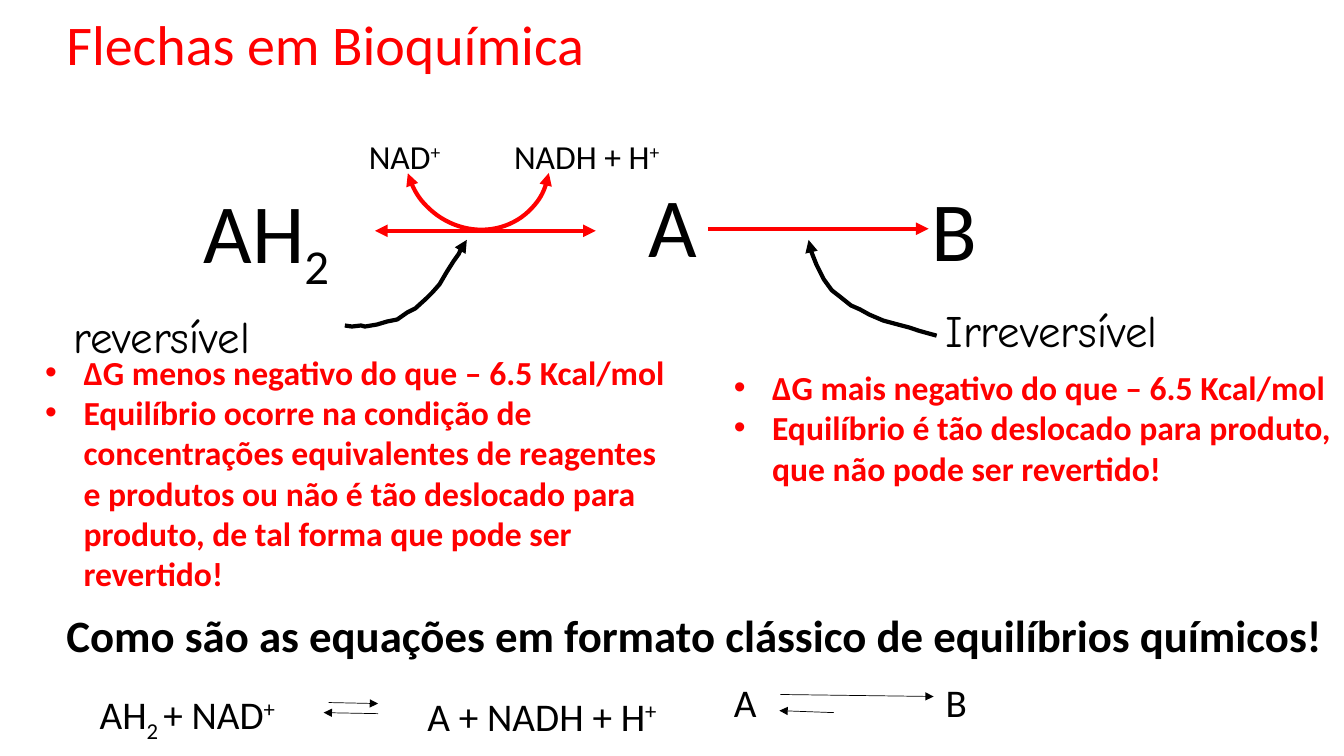
from lxml import etree
from pptx import Presentation
from pptx.dml.color import RGBColor
from pptx.enum.shapes import MSO_CONNECTOR as Connector, MSO_SHAPE as Shape
from pptx.enum.text import MSO_AUTO_SIZE as AutoSize
from pptx.oxml.ns import qn
from pptx.util import Inches, Pt

COLORS = {"red": "FF0000", "black": "000000"}
BODY, HAND = "Calibri", "Comic Neue"
SUB, SUP = -25, 30

# (left, top, width, height), runs as (text, baseline), size, color, font, bold
LABELS = [
    ((6.33, 1.67, 0.69, 1.11), [("A", 0)], 60, "black", BODY, False),
    ((1.92, 1.73, 1.5, 1.11), [("AH", 0), ("2", SUB)], 60, "black", BODY, False),
    ((9.14, 1.71, 0.66, 1.11), [("B", 0)], 60, "black", BODY, False),
    ((3.56, 1.3, 0.93, 0.5), [("NAD", 0), ("+", SUP)], 24, "black", BODY, False),
    ((5, 1.3, 1.67, 0.5), [("NADH + H", 0), ("+", SUP)], 24, "black", BODY, False),
    ((9.28, 2.95, 3.05, 0.64), [("Irreversível", 0)], 32, "black", HAND, False),
    ((0.63, 3.01, 2.56, 0.64), [("reversível", 0)], 32, "black", HAND, False),
    ((0.56, 0.05, 5.39, 0.77), [("Flechas em Bioquímica", 0)], 40, "red", BODY, False),
    ((0.56, 5.98, 12.77, 0.64),
     [("Como são as equações em formato clássico de equilíbrios químicos!", 0)],
     32, "black", BODY, True),
    ((0.89, 6.8, 1.98, 0.57), [("AH", 0), ("2 ", SUB), ("+ NAD", 0), ("+", SUP)],
     28, "black", BODY, False),
    ((4.14, 6.82, 2.47, 0.57), [("A + NADH + H", 0), ("+", SUP)], 28, "black", BODY, False),
    ((7.18, 6.68, 0.43, 0.57), [("A", 0)], 28, "black", BODY, False),
    ((9.28, 6.68, 0.43, 0.57), [("B", 0)], 28, "black", BODY, False),
]

BULLETS = [
    ((7.18, 3.59, 6.23, 1.31), [
        "ΔG mais negativo do que – 6.5 Kcal/mol",
        "Equilíbrio é tão deslocado para produto, que não pode ser revertido!"]),
    ((0.35, 3.44, 6.39, 2.52), [
        "ΔG menos negativo do que – 6.5 Kcal/mol",
        "Equilíbrio ocorre na condição de concentrações equivalentes de reagentes "
        "e produtos ou não é tão deslocado para produto, de tal forma que pode ser "
        "revertido!"]),
]

# start, end, color, width, arrow ends
ARROWS = [
    ((3.72, 2.29), (5.91, 2.29), "red", 3, ("headEnd", "tailEnd")),
    ((7.02, 2.27), (9.21, 2.27), "red", 3, ("tailEnd",)),
    ((3.26, 6.97), (3.75, 6.98), "black", 0.5, ("tailEnd",)),
    ((3.75, 7.08), (3.21, 7.07), "black", 0.5, ("tailEnd",)),
    ((7.74, 6.89), (9.26, 6.91), "black", 0.5, ("tailEnd",)),
    ((8.27, 7.07), (7.73, 7.05), "black", 0.5, ("tailEnd",)),
]

# Each pointer runs from its label to the arrow it names
POINTERS = [
    [(9.29, 3.33), (9.18, 3.3), (9.11, 3.28), (9.02, 3.25), (8.87, 3.21), (8.76, 3.18),
     (8.62, 3.12), (8.53, 3.07), (8.44, 3.03), (8.34, 2.95), (8.25, 2.88), (8.17, 2.77),
     (8.1, 2.63), (8.06, 2.53), (8.03, 2.45), (8.02, 2.38)],
    [(3.42, 3.23), (3.49, 3.24), (3.58, 3.23), (3.62, 3.24), (3.74, 3.22), (3.84, 3.19),
     (3.94, 3.17), (4.04, 3.1), (4.12, 3.06), (4.23, 2.96), (4.29, 2.9), (4.36, 2.82),
     (4.43, 2.7), (4.5, 2.59), (4.55, 2.52), (4.59, 2.43), (4.63, 2.38)],
]


def format_run(run, size, color, font, bold):
    run.font.size = Pt(size)
    run.font.name = font
    run.font.bold = bold
    run.font.color.rgb = RGBColor.from_string(COLORS[color])


def add_box(slide, area, wrap):
    box = slide.shapes.add_textbox(*map(Inches, area))
    box.text_frame.word_wrap = wrap
    box.text_frame.auto_size = AutoSize.SHAPE_TO_FIT_TEXT
    return box.text_frame


def add_label(slide, area, spans, *style):
    para = add_box(slide, area, False).paragraphs[0]
    for text, baseline in spans:
        run = para.add_run()
        run.text = text
        format_run(run, *style)
        if baseline:
            run.font._element.set("baseline", str(baseline * 1000))


def add_bullets(slide, area, lines):
    frame = add_box(slide, area, True)
    frame.text = "\n".join(lines)
    for para in frame.paragraphs:
        format_run(para.runs[0], 24, "red", BODY, True)
        props = para._p.get_or_add_pPr()
        props.set("marL", str(Inches(0.38)))
        props.set("indent", str(-Inches(0.38)))
        etree.SubElement(props, qn("a:buFont")).set("typeface", "Arial")
        etree.SubElement(props, qn("a:buChar")).set("char", "•")


def style_line(shape, color, width, ends):
    shape.line.color.rgb = RGBColor.from_string(COLORS[color])
    shape.line.width = Pt(width)
    for end in ends:
        etree.SubElement(shape.line._get_or_add_ln(), qn(f"a:{end}")).set("type", "triangle")


def add_arrow(slide, start, end, *style):
    arrow = slide.shapes.add_connector(Connector.STRAIGHT, *map(Inches, start + end))
    style_line(arrow, *style)
    etree.SubElement(arrow._element.spPr, qn("a:effectLst"))


def add_cofactor_arc(slide):
    arc = slide.shapes.add_shape(Shape.ARC, *map(Inches, (4.04, 0.83, 1.39, 1.47)))
    arc.rotation = 132.9
    arc.adjustments[0], arc.adjustments[1] = 143.46, 20.7
    arc.fill.background()
    style_line(arc, "red", 3, ("headEnd", "tailEnd"))
    arc.shadow.inherit = False


def add_pointer(slide, points):
    start, *rest = [(Inches(x), Inches(y)) for x, y in points]
    builder = slide.shapes.build_freeform(*start)
    builder.add_line_segments(rest, close=False)
    pointer = builder.convert_to_shape()
    pointer.fill.background()
    style_line(pointer, "black", 3, ("tailEnd",))
    pointer.shadow.inherit = False


def main():
    deck = Presentation()
    deck.slide_width, deck.slide_height = Inches(13.33), Inches(7.5)
    slide = deck.slides.add_slide(deck.slide_layouts[6])
    for arrow in ARROWS:
        add_arrow(slide, *arrow)
    add_cofactor_arc(slide)
    for points in POINTERS:
        add_pointer(slide, points)
    for label in LABELS:
        add_label(slide, *label)
    for area, lines in BULLETS:
        add_bullets(slide, area, lines)
    deck.save("out.pptx")


if __name__ == "__main__":
    main()
